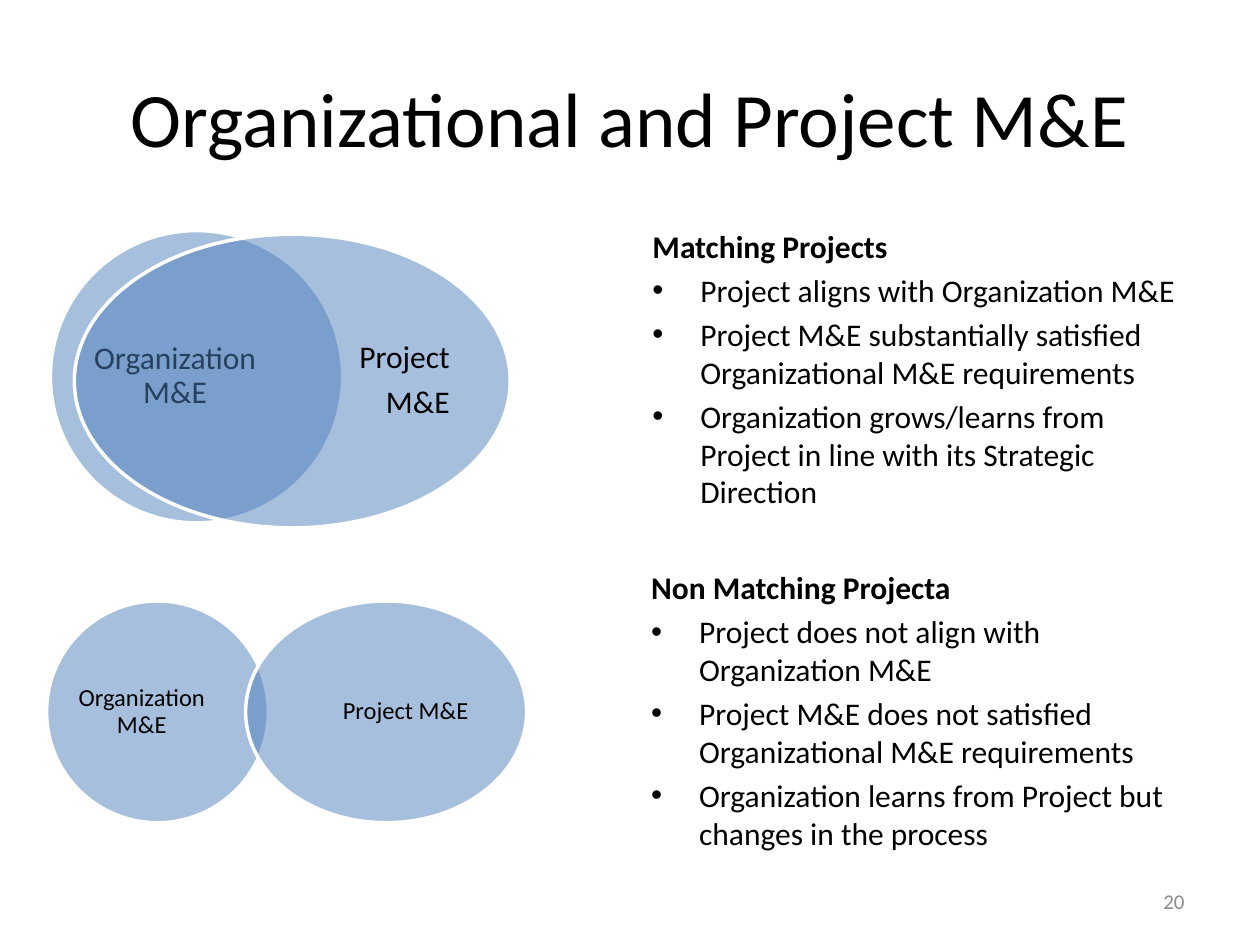
from dataclasses import dataclass

from lxml.etree import SubElement
from pptx import Presentation
from pptx.dml.color import RGBColor
from pptx.enum.shapes import MSO_SHAPE
from pptx.enum.text import MSO_ANCHOR, PP_ALIGN
from pptx.oxml.ns import qn
from pptx.util import Inches, Pt


@dataclass(frozen=True)
class Theme:
    font: str = "Calibri"
    text: RGBColor = RGBColor(0x00, 0x00, 0x00)
    muted: RGBColor = RGBColor(0x8C, 0x8C, 0x8C)
    circle: RGBColor = RGBColor(0x4F, 0x81, 0xBD)
    outline: RGBColor = RGBColor(0xFF, 0xFF, 0xFF)
    title_size: int = 44
    body_size: int = 18
    small_size: int = 14
    number_size: int = 12


theme = Theme()
prs = Presentation()
prs.slide_width, prs.slide_height = Inches(10), Inches(7.5)
s = prs.slides.add_slide(prs.slide_layouts[6])


def add_text_box(box, anchor=MSO_ANCHOR.MIDDLE, inset=True):
    tf = s.shapes.add_textbox(*map(Inches, box)).text_frame
    tf.word_wrap = True
    tf.vertical_anchor = anchor
    if not inset:
        tf.margin_left = tf.margin_right = tf.margin_top = tf.margin_bottom = 0
    return tf


def add_paragraph(tf, text, size, align=PP_ALIGN.LEFT, color=theme.text, bold=False):
    """Fill the empty first paragraph, or append one, with a single run."""
    p = tf.paragraphs[0] if not tf.paragraphs[0].runs else tf.add_paragraph()
    p.alignment = align
    r = p.add_run()
    r.text = text
    r.font.name = theme.font
    r.font.size = Pt(size)
    r.font.bold = bold
    r.font.color.rgb = color
    return p


# Title and slide number
add_paragraph(add_text_box((0.5, 0.3, 9, 1.25)), "Organizational and Project M&E",
              theme.title_size, PP_ALIGN.CENTER)
add_paragraph(add_text_box((7.17, 6.95, 2.33, 0.4)), "20",
              theme.number_size, PP_ALIGN.RIGHT, theme.muted)

# Venn diagrams: ellipse, label box, label lines, size, alignment
venn_sets = [
    ((0.4, 1.83, 2.32, 2.32), (0.72, 2.1, 1.34, 1.77),
     ["Organization M&E"], theme.body_size, PP_ALIGN.CENTER),
    ((0.59, 1.86, 3.46, 2.33), (1.57, 2.13, 2, 1.78),
     ["Project", " M&E"], theme.body_size, PP_ALIGN.RIGHT),
    ((0.37, 4.77, 1.76, 1.76), (0.62, 4.98, 1.01, 1.34),
     ["Organization M&E"], theme.small_size, PP_ALIGN.CENTER),
    ((1.95, 4.77, 2.23, 1.76), (2.58, 4.98, 1.28, 1.34),
     ["Project M&E"], theme.small_size, PP_ALIGN.CENTER),
]
for ellipse, label_box, lines, size, align in venn_sets:
    sp = s.shapes.add_shape(MSO_SHAPE.OVAL, *map(Inches, ellipse))
    sp.shadow.inherit = False
    sp.fill.solid()
    sp.fill.fore_color.rgb = theme.circle
    color = sp.fill._xPr.find(qn("a:solidFill"))[0]
    SubElement(color, qn("a:alpha")).set("val", "50000")
    sp.line.color.rgb = theme.outline
    sp.line.width = Pt(2)

    tf = add_text_box(label_box, inset=False)
    for line in lines:
        p = add_paragraph(tf, line, size, align)
        p.line_spacing = 0.9
        p.space_after = Pt(size * 0.35)

# Bulleted explanations beside each diagram
explanations = [
    ((5.08, 1.75, 4.42, 2.47), "Matching Projects", [
        "Project aligns with Organization M&E",
        "Project M&E substantially satisfied Organizational M&E requirements",
        "Organization grows/learns from Project in line with its Strategic Direction",
    ]),
    ((5.07, 4.46, 4.42, 2.68), "Non Matching Projecta", [
        "Project does not align with Organization M&E",
        "Project M&E does not satisfied Organizational M&E requirements",
        "Organization learns from Project but changes in the process",
    ]),
]
for box, heading, bullets in explanations:
    tf = add_text_box(box, MSO_ANCHOR.TOP)
    add_paragraph(tf, heading, theme.body_size, bold=True)
    for bullet in bullets:
        pPr = add_paragraph(tf, bullet, theme.body_size)._p.get_or_add_pPr()
        pPr.set("marL", str(Inches(0.38)))
        pPr.set("indent", str(-Inches(0.38)))
        SubElement(pPr, qn("a:buFont")).set("typeface", "Arial")
        SubElement(pPr, qn("a:buChar")).set("char", "•")
    for p in tf.paragraphs:
        p.space_before = Pt(theme.body_size * 0.2)

prs.save("out.pptx")
